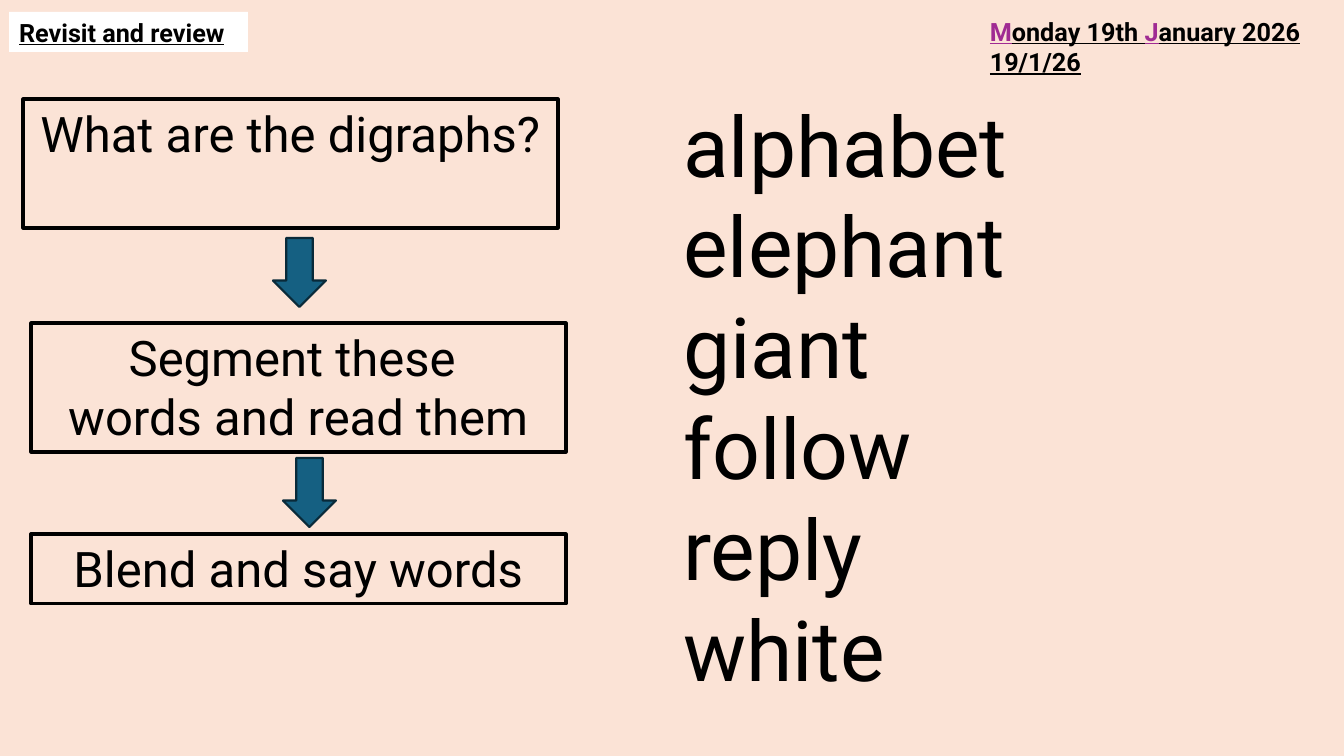
from dataclasses import dataclass

from lxml.etree import SubElement
from pptx import Presentation
from pptx.dml.color import RGBColor
from pptx.enum.shapes import MSO_SHAPE
from pptx.enum.text import MSO_ANCHOR, MSO_AUTO_SIZE, PP_ALIGN
from pptx.oxml.ns import qn
from pptx.util import Pt


@dataclass(frozen=True)
class Theme:
    """Colours, font and type sizes of the lesson slide."""

    font: str = "Roboto"
    background: str = "FBE3D6"
    paper: str = "FFFFFF"
    ink: str = "000000"
    capital: str = "A02B93"
    arrow: str = "156082"
    arrow_edge: str = "092A39"
    heading_size: int = 18
    step_size: int = 35
    word_size: int = 60


class LessonSlide:
    """Draws the elements of one lesson slide, measured in px."""

    EMU_PER_PX = 914400 / 100.8

    def __init__(self, deck, theme):
        """Set the page size and add a slide with a plain background."""
        self.theme = theme
        deck.slide_width, deck.slide_height = self.scale(1344, 756)
        self.page = deck.slides.add_slide(deck.slide_layouts[1])
        fill = self.page.background.fill
        fill.solid()
        fill.fore_color.rgb = RGBColor.from_string(theme.background)

    def scale(self, *lengths):
        """Turn px lengths into EMU."""
        return [round(length * self.EMU_PER_PX) for length in lengths]

    def place(self, shape, area):
        """Move and size a placeholder."""
        shape.left, shape.top, shape.width, shape.height = self.scale(*area)

    def style(self, span, size, color, heading=False):
        """Format one run."""
        font = span.font
        font.name = self.theme.font
        font.size = Pt(size)
        font.color.rgb = RGBColor.from_string(color)
        if heading:
            font.bold = True
            font.underline = True

    def set_lines(self, shape, lines, size, align=PP_ALIGN.LEFT, heading=False):
        """Fill a shape with paragraphs of (text, colour) spans."""
        frame = shape.text_frame
        frame.word_wrap = True
        frame.auto_size = MSO_AUTO_SIZE.NONE
        frame.vertical_anchor = MSO_ANCHOR.TOP
        for index, spans in enumerate(lines):
            para = frame.paragraphs[0] if index == 0 else frame.add_paragraph()
            para.alignment = align
            para.space_before = Pt(0)
            for text, color in spans:
                span = para.add_run()
                span.text = text
                self.style(span, size, color, heading)

    def plain(self, *lines):
        """Make single-colour lines."""
        return [[(line, self.theme.ink)] for line in lines]

    def title(self, text, area):
        """Put the title on a paper-coloured label."""
        title = self.page.shapes.title
        self.place(title, area)
        title.fill.solid()
        title.fill.fore_color.rgb = RGBColor.from_string(self.theme.paper)
        self.set_lines(title, self.plain(text), self.theme.heading_size, heading=True)

    def word_list(self, words, area):
        """Put the words in the body placeholder without bullets."""
        body = self.page.placeholders[1]
        self.place(body, area)
        self.set_lines(body, self.plain(*words), self.theme.word_size)
        for para in body.text_frame.paragraphs:
            properties = para._p.get_or_add_pPr()
            properties.set("marL", "0")
            properties.set("indent", "0")
            SubElement(properties, qn("a:buNone"))

    def date(self, lines, area):
        """Add the date as a heading text box."""
        box = self.page.shapes.add_textbox(*self.scale(*area))
        self.set_lines(box, lines, self.theme.heading_size, heading=True)

    def outlined(self, kind, area, color, width):
        """Add a preset shape with an outline and no shadow."""
        shape = self.page.shapes.add_shape(kind, *self.scale(*area))
        shape.shadow.inherit = False
        shape.line.color.rgb = RGBColor.from_string(color)
        shape.line.width = Pt(width)
        return shape

    def step(self, lines, area):
        """Add a framed instruction."""
        box = self.outlined(MSO_SHAPE.RECTANGLE, area, self.theme.ink, 2.25)
        box.fill.background()
        self.set_lines(box, self.plain(*lines), self.theme.step_size, PP_ALIGN.CENTER)

    def arrow(self, left, top):
        """Add a downward arrow between two steps."""
        area = (left, top, 53, 69)
        arrow = self.outlined(MSO_SHAPE.DOWN_ARROW, area, self.theme.arrow_edge, 1.5)
        arrow.fill.solid()
        arrow.fill.fore_color.rgb = RGBColor.from_string(self.theme.arrow)


def main():
    """Build and save the lesson slide."""
    deck = Presentation()
    theme = Theme()
    lesson = LessonSlide(deck, theme)
    lesson.title("Revisit and review", (9, 12, 239, 40))
    words = ["alphabet", "elephant", "giant", "follow", "reply", "white"]
    lesson.word_list(words, (673, 88, 671, 668))
    steps = [
        (["What are the digraphs?"], 23, 99, 129),
        (["Segment these ", "words and read them"], 31, 323, 129),
        (["Blend and say words"], 31, 534, 70),
    ]
    for lines, left, top, height in steps:
        lesson.step(lines, (left, top, 535, height))
    for left, top in [(273, 238), (283, 458)]:
        lesson.arrow(left, top)
    day = [
        ("M", theme.capital),
        ("onday 19th ", theme.ink),
        ("J", theme.capital),
        ("anuary 2026", theme.ink),
    ]
    lesson.date([day, *lesson.plain("19/1/26")], (980, 11, 364, 72))
    deck.save("out.pptx")


if __name__ == "__main__":
    main()
